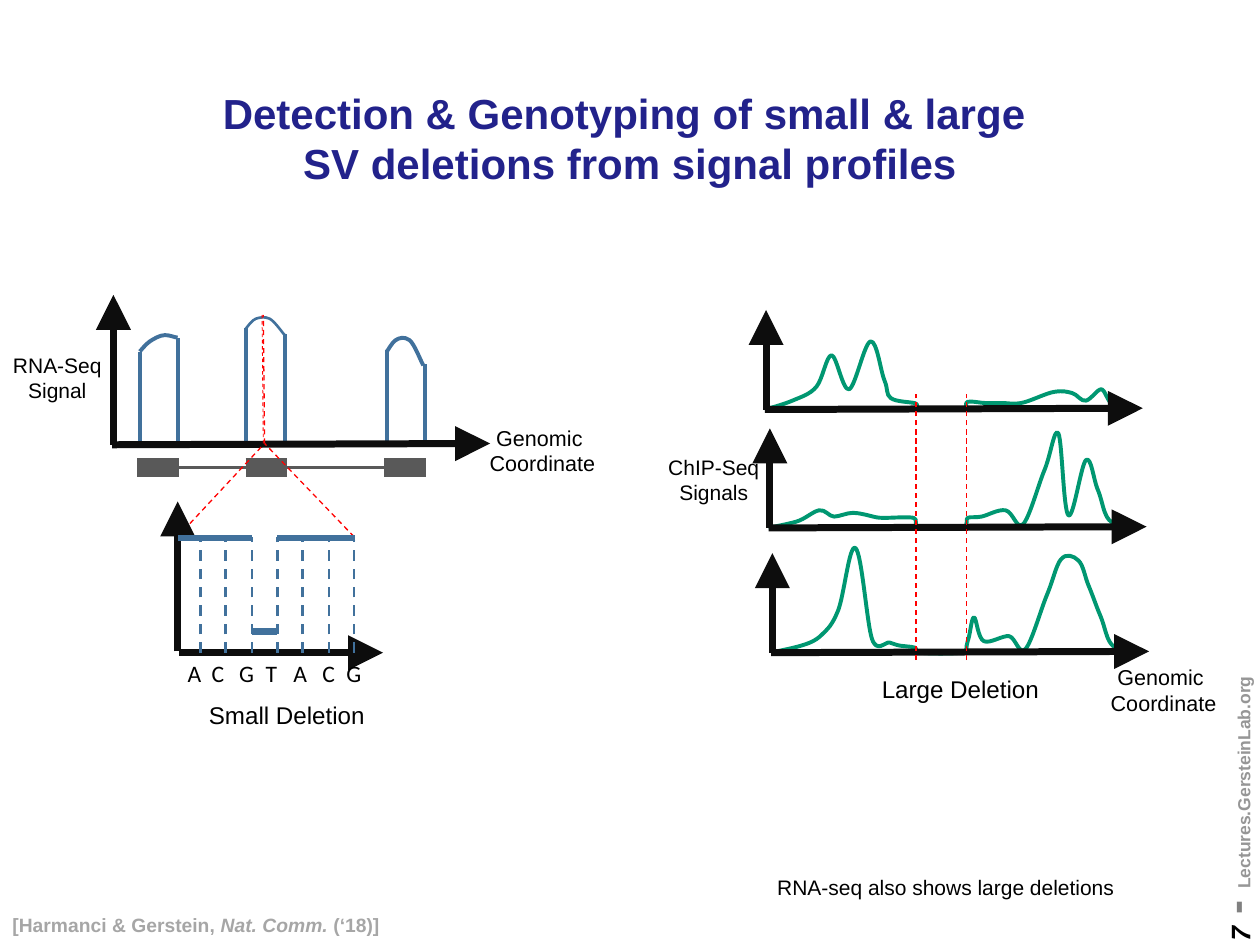
from dataclasses import dataclass

from lxml.etree import SubElement
from pptx import Presentation
from pptx.dml.color import RGBColor
from pptx.enum.dml import MSO_LINE
from pptx.enum.shapes import MSO_CONNECTOR
from pptx.enum.text import MSO_ANCHOR, MSO_AUTO_SIZE, PP_ALIGN
from pptx.oxml.ns import qn
from pptx.util import Pt

PX = 9144  # 100 px to the inch


@dataclass(frozen=True)
class Theme:
    title: str = "22228B"
    text: str = "000000"
    citation: str = "A6A6A6"
    dash: str = "808080"
    footer: str = "969696"
    axis: str = "0D0D0D"
    rna: str = "41719C"
    chip: str = "009771"
    exon: str = "595959"
    marker: str = "FF0000"
    title_size: float = 24
    caption_size: float = 13.8
    base_size: float = 13.5
    axis_size: float = 12.3
    label_size: float = 12
    citation_size: float = 11
    number_size: float = 16
    dash_size: float = 24
    footer_size: float = 10


theme = Theme()

# colour, width, dashed, arrowhead
LINES = {
    "axis": (theme.axis, 4, False, True),
    "signal": (theme.rna, 2.25, False, False),
    "thin signal": (theme.rna, 1.5, False, False),
    "base": (theme.rna, 1.5, True, False),
    "level": (theme.rna, 3.75, False, False),
    "chip": (theme.chip, 2.25, False, False),
    "exon": (theme.exon, 11.25, False, False),
    "intron": (theme.exon, 2, False, False),
    "marker": (theme.marker, 0.75, True, False),
    "thin marker": (theme.marker, 0.5, True, False),
}


def style_line(shape, style):
    colour, width, dashed, arrow = LINES[style]
    shape.line.color.rgb = RGBColor.from_string(colour)
    shape.line.width = Pt(width)
    if dashed:
        shape.line.dash_style = MSO_LINE.DASH
    properties = shape._element.spPr
    if arrow:
        SubElement(properties.find(qn("a:ln")), qn("a:tailEnd"),
                   type="triangle", w="lg", len="lg")
    if properties.find(qn("a:effectLst")) is None:
        SubElement(properties, qn("a:effectLst"))


def write(paragraph, runs, align=PP_ALIGN.LEFT):
    """Add runs given as (text, format) pairs; a None text is a line break."""
    paragraph.alignment = align
    for text, values in runs:
        if text is None:
            paragraph.add_line_break()
            continue
        run = paragraph.add_run()
        run.text = text
        for name, value in values.items():
            if name == "color":
                run.font.color.rgb = RGBColor.from_string(value)
            else:
                setattr(run.font, name, Pt(value) if name == "size" else value)


presentation = Presentation()
presentation.slide_width, presentation.slide_height = 1000 * PX, 750 * PX
slide = presentation.slides.add_slide(presentation.slide_layouts[5])

# Title
title = slide.shapes.title
title.left, title.top, title.width, title.height = 75 * PX, 67 * PX, 850 * PX, 125 * PX
frame = title.text_frame
frame.word_wrap = True
frame.auto_size = MSO_AUTO_SIZE.NONE
frame.vertical_anchor = MSO_ANCHOR.MIDDLE
frame.margin_bottom = 45 * PX
heading = {"name": "Arial", "size": theme.title_size, "bold": True, "color": theme.title}
write(frame.paragraphs[0], [
    ("Detection & Genotyping of small & large ", heading),
    (None, {}),
    ("SV deletions from signal profiles", heading),
], PP_ALIGN.CENTER)

large = slide.shapes.add_group_shape().shapes
small = slide.shapes.add_group_shape().shapes

# Smooth signal curves through their knots
curves = [
    (large, "chip", [
        (607, 325), (629, 318), (648, 307), (660, 282), (674, 309), (691, 271), (702, 302),
        (707, 316), (726, 320), (729, 324), (746, 324), (765, 324), (768, 319), (783, 320),
        (797, 320), (810, 320), (837, 311), (851, 312), (862, 318), (874, 309), (883, 321),
        (897, 323)]),
    (large, "chip", [
        (610, 419), (632, 414), (650, 405), (662, 410), (677, 407), (693, 410), (703, 411),
        (725, 411), (728, 418), (742, 418), (765, 418), (768, 411), (779, 410), (798, 405),
        (812, 416), (829, 373), (840, 344), (848, 409), (862, 365), (871, 388), (877, 407),
        (885, 416), (899, 417)]),
    (large, "chip", [
        (612, 518), (634, 513), (652, 504), (665, 485), (679, 435), (692, 507), (706, 510),
        (712, 512), (726, 514), (730, 518), (763, 518), (768, 509), (773, 490), (781, 509),
        (801, 505), (814, 515), (831, 472), (842, 444), (856, 445), (864, 465), (873, 488),
        (879, 506), (887, 515), (901, 517)]),
    (small, "signal", [(111, 279), (119, 271), (131, 266), (141, 268)]),
    (small, "thin signal", [(195, 261), (203, 253), (214, 253), (226, 266)]),
    (small, "signal", [(307, 279), (314, 270), (325, 270), (336, 290)]),
]
for shapes, style, knots in curves:
    builder = shapes.build_freeform(*knots[0], scale=PX)
    builder.add_line_segments(knots[1:], close=False)
    curve = builder.convert_to_shape()
    curve.fill.background()
    style_line(curve, style)
    # Turn each straight segment into a Bezier curve with Catmull-Rom handles
    origin_x, origin_y = (min(values) for values in zip(*knots))
    padded = [knots[0], *knots, knots[-1]]
    segments = list(curve._element.iter(qn("a:lnTo")))
    for segment, before, start, end, after in zip(
            segments, padded, padded[1:], padded[2:], padded[3:]):
        segment.tag  # noqa: B018
        bezier = SubElement(segment.getparent(), qn("a:cubicBezTo"))
        handles = (
            [s + (e - b) / 6 for b, s, e in zip(before, start, end)],
            [e - (a - s) / 6 for s, e, a in zip(start, end, after)],
            end,
        )
        path_width = int(segment.getparent().get("w"))
        unit = path_width / (max(x for x, _ in knots) - origin_x)
        for x, y in handles:
            SubElement(bezier, qn("a:pt"), x=str(round((x - origin_x) * unit)),
                       y=str(round((y - origin_y) * unit * 1.0)))
        segment.getparent().replace(segment, bezier)

# Straight lines: start x, start y, end x, end y
lines = []
for x, y in [(607, 325), (610, 419), (612, 518)]:
    lines += [(large, "axis", x, y, x + 300, y - 1), (large, "axis", x + 1, y, x + 1, y - 79)]
lines += [(large, "marker", x, 524, x, 313) for x in (727, 767)]

lines.append((small, "intron", 119, 371, 334, 371))
lines += [(small, "exon", x, 371, x + 33, 371) for x in (109, 195, 305)]
lines += [(small, "signal", x, 353, x, top) for x, top in
          [(111, 279), (141, 268), (195, 260), (226, 265), (307, 278), (337, 289)]]
lines += [
    (small, "axis", 90, 353, 90, 234),
    (small, "axis", 89, 353, 389, 352),
    (small, "marker", 141, 426, 209, 353),
    (small, "marker", 281, 426, 210, 352),
    (small, "thin marker", 209, 352, 208, 250),
    (small, "marker", 210, 352, 209, 250),
    (small, "axis", 142, 518, 304, 518),
    (small, "axis", 141, 517, 141, 398),
]
lines += [(small, "base", round(159 + 20.33 * i), 518, round(159 + 20.33 * i), 426)
          for i in range(7)]
lines += [(small, "level", start, y, end, y)
          for start, end, y in [(200, 141, 427), (220, 200, 501), (282, 220, 427)]]
for shapes, style, *ends in lines:
    connector = shapes.add_connector(MSO_CONNECTOR.STRAIGHT, *(value * PX for value in ends))
    style_line(connector, style)

# Labels: position, size of type, lines of text
label = {"name": "Arial", "color": theme.text}
center, left = PP_ALIGN.CENTER, PP_ALIGN.LEFT
labels = [
    (large, (520, 356, 93, 50), theme.label_size, center, ["ChIP-Seq", "Signals"]),
    (large, (690, 530, 147, 33), theme.caption_size, left, ["Large Deletion"]),
    (large, (871, 522, 105, 52), theme.axis_size, center, ["Genomic ", "Coordinate"]),
    (small, (0, 275, 91, 50), theme.label_size, center, ["RNA-Seq", "Signal"]),
    (small, (156, 551, 146, 33), theme.caption_size, left, ["Small Deletion"]),
    (small, (378, 332, 105, 52), theme.axis_size, center, ["Genomic ", "Coordinate"]),
    (slide.shapes, (607, 689, 289, 30), theme.label_size, left,
     ["RNA-seq also shows large deletions"]),
]
for shapes, box, size, align, texts in labels:
    frame = shapes.add_textbox(*(value * PX for value in box)).text_frame
    frame.word_wrap = False
    frame.auto_size = MSO_AUTO_SIZE.SHAPE_TO_FIT_TEXT
    for index, text in enumerate(texts):
        paragraph = frame.add_paragraph() if index else frame.paragraphs[0]
        write(paragraph, [(text, {**label, "size": size})], align)

# Bases under the zoomed axis, set on tab stops
frame = small.add_textbox(139 * PX, 518 * PX, 158 * PX, 33 * PX).text_frame
frame.word_wrap = True
paragraph = frame.paragraphs[0]
write(paragraph, [("\t".join("ACGTACG"),
                   {"name": "Calibri", "size": theme.base_size, "color": theme.text})])
tab_list = SubElement(paragraph._p.get_or_add_pPr(), qn("a:tabLst"))
for position in (19, 41, 62, 84, 107, 126):
    SubElement(tab_list, qn("a:tab"), pos=str(position * PX), algn="l")

# Citation
citation = {"name": "Arial", "size": theme.citation_size, "bold": True, "color": theme.citation}
frame = slide.shapes.add_textbox(0, 720 * PX, 312 * PX, 29 * PX).text_frame
frame.word_wrap = False
write(frame.paragraphs[0], [
    ("[Harmanci & Gerstein, ", citation),
    ("Nat. Comm. ", {**citation, "italic": True}),
    ("(‘18)]", citation),
])

# Page number and address along the right edge
footer = slide.shapes.add_textbox(800 * PX, 575 * PX, 337 * PX, 29 * PX)
footer.rotation = 270
footer.text_frame.word_wrap = True
bold = {"name": "Arial", "bold": True}
write(footer.text_frame.paragraphs[0], [
    ("7", {**bold, "name": "Courier New", "size": theme.number_size, "italic": True,
           "color": theme.text}),
    (" - ", {**bold, "size": theme.dash_size, "color": theme.dash}),
    ("Lectures.GersteinLab.org", {**bold, "size": theme.footer_size, "color": theme.footer}),
])

presentation.save("out.pptx")
